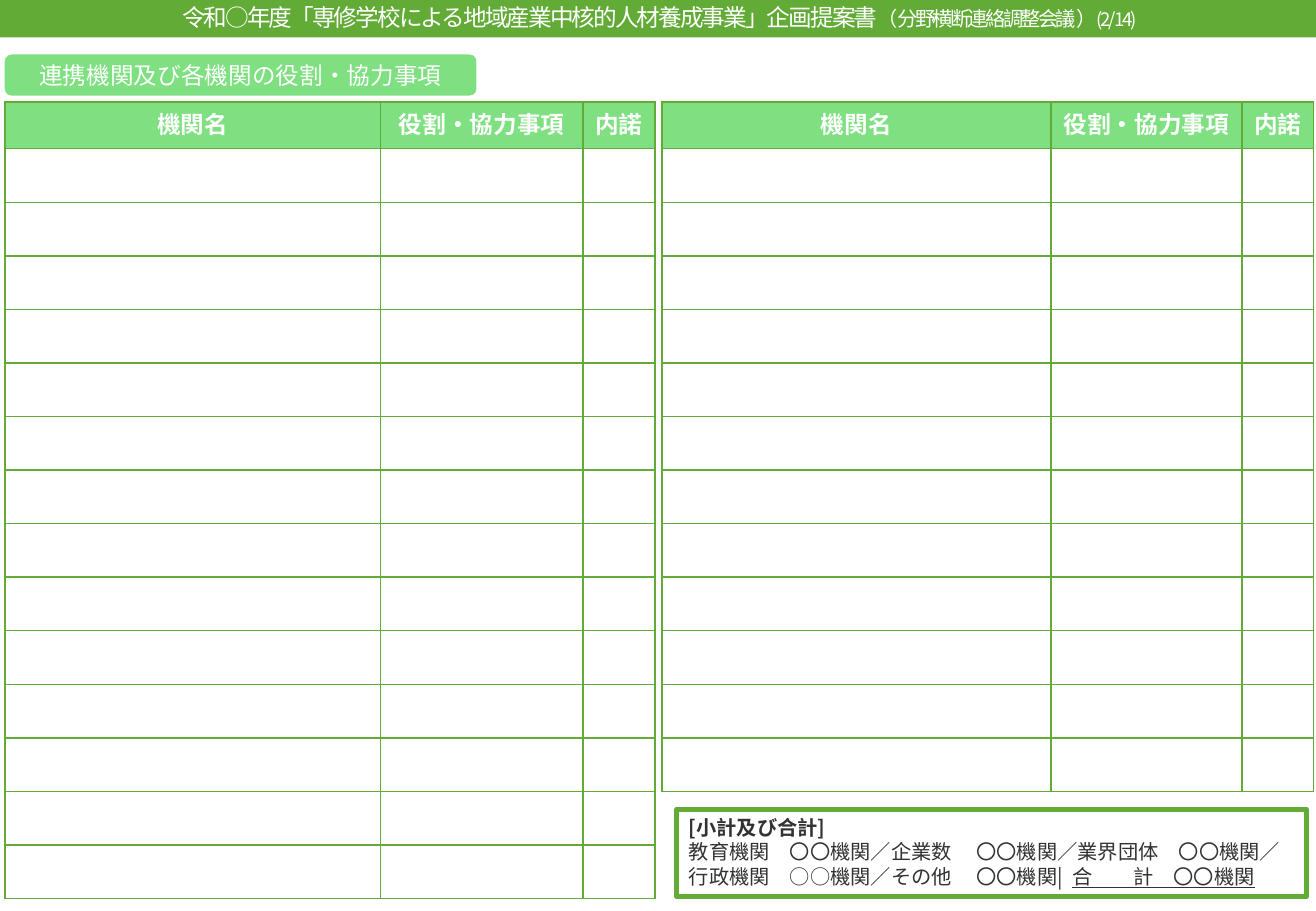
"""Build the slide of partner bodies, their roles and the subtotal box."""
from dataclasses import dataclass, field
from typing import Any

from lxml import etree
from pptx import Presentation
from pptx.dml.color import RGBColor
from pptx.enum.shapes import MSO_SHAPE
from pptx.enum.text import MSO_ANCHOR, MSO_AUTO_SIZE, PP_ALIGN
from pptx.oxml.ns import qn
from pptx.util import Cm, Pt

RECT, ROUND = MSO_SHAPE.RECTANGLE, MSO_SHAPE.ROUNDED_RECTANGLE
TOP, MIDDLE = MSO_ANCHOR.TOP, MSO_ANCHOR.MIDDLE
LEFT, CENTER = PP_ALIGN.LEFT, PP_ALIGN.CENTER
FIXED = MSO_AUTO_SIZE.NONE

GREEN, LIGHT, WHITE, DARK = "62AB37", "7EE081", "FFFFFF", "323232"
GOTHIC, ROBOTO = "Noto Sans CJK JP", "Roboto"
HEADS = ("機関名", "役割・協力事項", "内諾")
HEAD_H, ROW_H, GRID_Y = 0.98, 1.12, 2.13


@dataclass
class Part:
    """A run of text with its own format."""
    text: str
    size: float = 14
    color: str = WHITE
    face: str = GOTHIC
    track: int = 0
    form: dict[str, Any] = field(default_factory=dict)


@dataclass
class Grid:
    """A table of partner bodies."""
    left: float
    widths: tuple[float, ...]
    rows: int


GRIDS = (
    Grid(0.1, (7.85, 4.24, 1.5), 14),
    Grid(13.84, (8.13, 3.99, 1.5), 12),
)
TITLE = [
    Part("令和○年度「専修学校による地域産業中核的人材養成事業」企画提案書", track=-120),
    Part("（", 12, track=-120),
    Part("分野横断連絡調整会議", 12, track=-160),
    Part("）", 12, track=-120),
    Part("(2/14)", 11, track=-120),
]
LABEL = [Part("連携機関及び各機関の役割・協力事項")]
TOTALS = [
    [Part("[小計及び合計]", 12, DARK, form={"bold": True})],
    [Part("教育機関　〇〇機関／企業数　 〇〇機関／業界団体　〇〇機関／", 12, DARK)],
    [
        Part("行政機関　○○機関／その他　 〇〇機関|  ", 12, DARK),
        Part("合　　計　〇〇機関", 12, DARK, form={"underline": True}),
    ],
]


def tint(code: str) -> RGBColor:
    """Turn a hex string into a colour."""
    return RGBColor.from_string(code)


def paint(fill: Any, code: str | None) -> None:
    """Fill with a colour, or with none."""
    if code is None:
        fill.background()
    else:
        fill.solid()
        fill.fore_color.rgb = tint(code)


def write(para: Any, parts: list[Part], align: Any) -> None:
    """Write the parts into a paragraph."""
    para.alignment = align
    for part in parts:
        run = para.add_run()
        run.text = part.text
        form = {"name": part.face, "size": Pt(part.size), "bold": False} | part.form
        for key, value in form.items():
            setattr(run.font, key, value)
        run.font.color.rgb = tint(part.color)
        props = run._r.get_or_add_rPr()
        if part.track:
            props.set("spc", str(part.track))
        etree.SubElement(props, qn("a:ea"), typeface=part.face)


def place(shape: Any, box: tuple[float, ...]) -> None:
    """Set the place and size of a shape."""
    for key, value in zip(("left", "top", "width", "height"), box):
        setattr(shape, key, Cm(value))


def frame(shape: Any, form: dict[str, Any]) -> Any:
    """Format the text frame of a shape and return it."""
    text = shape.text_frame
    for key, value in form.items():
        setattr(text, key, value)
    return text


def add_title(slide: Any) -> None:
    """Turn the title placeholder into the top band."""
    title = slide.shapes.title
    place(title, (0, -0.08, 27.58, 0.86))
    paint(title.fill, GREEN)
    form = {"margin_top": 0, "margin_bottom": 0, "word_wrap": True,
            "auto_size": FIXED, "vertical_anchor": MIDDLE}
    write(frame(title, form).paragraphs[0], TITLE, CENTER)


def add_box(slide: Any, kind: Any, box: tuple[float, ...], fill: str | None,
            line: str | None) -> Any:
    """Add a plain shape."""
    shape = slide.shapes.add_shape(kind, *map(Cm, box))
    shape.shadow.inherit = False
    paint(shape.fill, fill)
    paint(shape.line.fill, line)
    return shape


def add_label(slide: Any) -> None:
    """Add the section label."""
    label = add_box(slide, ROUND, (0.1, 1.14, 9.86, 0.86), LIGHT, None)
    form = {"margin_top": 0, "margin_bottom": 0, "word_wrap": True,
            "vertical_anchor": MIDDLE}
    write(frame(label, form).paragraphs[0], LABEL, CENTER)


def add_totals(slide: Any) -> None:
    """Add the box of subtotals and total."""
    box = add_box(slide, RECT, (14.15, 16.92, 13.16, 1.83), None, GREEN)
    box.line.width = Pt(3)
    form = {"margin_right": 0, "word_wrap": True, "vertical_anchor": TOP}
    text = frame(box, form)
    for index, parts in enumerate(TOTALS):
        para = text.add_paragraph() if index else text.paragraphs[0]
        para.line_spacing = Pt(14.5)
        write(para, parts, LEFT)


def edge(cell: Any) -> None:
    """Draw the four borders of a cell."""
    props = cell._tc.get_or_add_tcPr()
    for side in ("lnL", "lnR", "lnT", "lnB"):
        line = etree.SubElement(props, qn(f"a:{side}"), w=str(Pt(1)))
        fill = etree.SubElement(line, qn("a:solidFill"))
        etree.SubElement(fill, qn("a:srgbClr"), val=GREEN)


def add_grid(slide: Any, grid: Grid) -> None:
    """Add a table with its head row and empty rows."""
    tall = HEAD_H + grid.rows * ROW_H
    box = (grid.left, GRID_Y, sum(grid.widths), tall)
    table = slide.shapes.add_table(grid.rows + 1, len(HEADS), *map(Cm, box)).table
    for col, width in zip(table.columns, grid.widths):
        col.width = Cm(width)
    for index, row in enumerate(table.rows):
        row.height = Cm(ROW_H if index else HEAD_H)
        for cell, head in zip(row.cells, HEADS):
            edge(cell)
            paint(cell.fill, None if index else LIGHT)
            cell.vertical_anchor = MIDDLE
            cell.margin_left = cell.margin_right = Cm(0.1)
            if index == 0:
                part = Part(head, face=ROBOTO, form={"bold": True})
                write(cell.text_frame.paragraphs[0], [part], CENTER)


def main() -> None:
    """Build and save the slide."""
    deck = Presentation()
    deck.slide_width, deck.slide_height = Cm(27.51), Cm(19.05)
    slide = deck.slides.add_slide(deck.slide_layouts[5])
    add_title(slide)
    add_label(slide)
    add_totals(slide)
    for grid in GRIDS:
        add_grid(slide, grid)
    deck.save("out.pptx")


if __name__ == "__main__":
    main()
